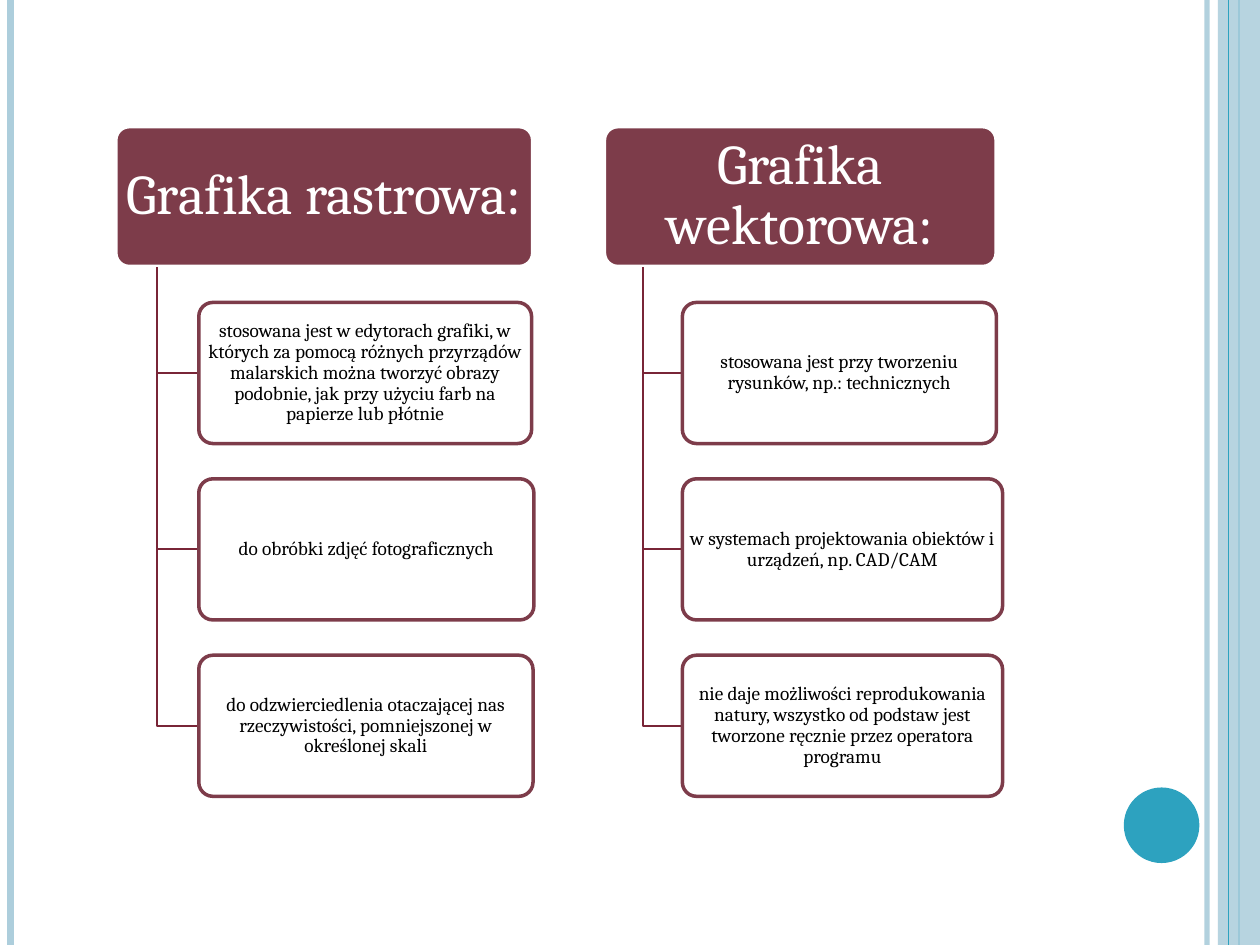
from dataclasses import dataclass

from lxml import etree
from pptx import Presentation
from pptx.dml.color import RGBColor
from pptx.enum.shapes import MSO_CONNECTOR, MSO_SHAPE
from pptx.enum.text import MSO_ANCHOR, PP_ALIGN
from pptx.oxml.ns import qn
from pptx.util import Pt

RECT, OVAL, ROUNDED = MSO_SHAPE.RECTANGLE, MSO_SHAPE.OVAL, MSO_SHAPE.ROUNDED_RECTANGLE
STRAIGHT = MSO_CONNECTOR.STRAIGHT
CENTER, MIDDLE = PP_ALIGN.CENTER, MSO_ANCHOR.MIDDLE

PALE_BLUE = RGBColor(0xAD, 0xCE, 0xDC)
TEAL = RGBColor(0x2D, 0xA2, 0xBF)
MAROON = RGBColor(0x7D, 0x3C, 0x4A)
BRANCH_RED = RGBColor(0x79, 0x25, 0x37)
WHITE = RGBColor(0xFF, 0xFF, 0xFF)
BLACK = RGBColor(0, 0, 0)

SLIDE_W, SLIDE_H = 720, 540
HEAD_TOP, BOX_H = 72, 80.64
GAP = BOX_H / 4
HEAD_BOTTOM = HEAD_TOP + BOX_H


@dataclass
class Stripe:
    x: float
    width: float
    color: RGBColor
    alpha: int = 100


@dataclass
class BoxStyle:
    fill: RGBColor
    line: RGBColor
    line_width: float
    text_color: RGBColor
    size: float
    inset_x: float
    inset_y: float


@dataclass
class Item:
    text: str
    width: float


@dataclass
class Branch:
    heading: str
    left: float
    width: float
    items: list[Item]


HEADING = BoxStyle(MAROON, WHITE, 2.75, WHITE, 32, 3, 2)
DETAIL = BoxStyle(WHITE, MAROON, 2, BLACK, 11, 1, 1)

STRIPES_BEHIND = [
    Stripe(689.8, 3, PALE_BLUE, 93),
    Stripe(6, 4.5, PALE_BLUE),
    Stripe(708, 1.5, TEAL),
]
STRIPE_FRONT = Stripe(702, 0.75, TEAL)

BRANCHES = [
    Branch("Grafika rastrowa:", 65.8, 239, [
        Item("stosowana jest w edytorach grafiki, w których za pomocą różnych "
             "przyrządów malarskich można tworzyć obrazy podobnie, jak przy "
             "użyciu farb na papierze lub płótnie", 190.2),
        Item("do obróbki zdjęć fotograficznych", 191.5),
        Item("do odzwierciedlenia otaczającej nas rzeczywistości, "
             "pomniejszonej w określonej skali", 191),
    ]),
    Branch("Grafika wektorowa:", 345, 224.6, [
        Item("stosowana jest przy tworzeniu rysunków, np.: technicznych", 179.5),
        Item("w systemach projektowania obiektów i urządzeń, np. CAD/CAM", 183),
        Item("nie daje możliwości reprodukowania natury, wszystko od podstaw "
             "jest tworzone ręcznie przez operatora programu", 183),
    ]),
]


def set_alpha(shape, percent: int) -> None:
    color = next(shape._element.spPr.iter(qn("a:srgbClr")))
    etree.SubElement(color, qn("a:alpha"), val=str(percent * 1000))


def add_stripe(s, stripe: Stripe) -> None:
    x = Pt(stripe.x)
    line = s.shapes.add_connector(STRAIGHT, x, 0, x, Pt(SLIDE_H))
    line.line.color.rgb = stripe.color
    line.line.width = Pt(stripe.width)
    if stripe.alpha < 100:
        set_alpha(line, stripe.alpha)
    etree.SubElement(line._element.spPr, qn("a:effectLst"))


def add_solid(s, kind, left: float, top: float, width: float, height: float,
              fill: RGBColor):
    sp = s.shapes.add_shape(kind, Pt(left), Pt(top), Pt(width), Pt(height))
    sp.shadow.inherit = False
    sp.fill.solid()
    sp.fill.fore_color.rgb = fill
    sp.line.fill.background()
    return sp


def add_box(s, text: str, left: float, top: float, width: float,
            style: BoxStyle) -> None:
    sp = add_solid(s, ROUNDED, left, top, width, BOX_H, style.fill)
    sp.adjustments[0] = 0.1
    sp.line.color.rgb = style.line
    sp.line.width = Pt(style.line_width)
    tf = sp.text_frame
    frame_format = {
        "word_wrap": True, "vertical_anchor": MIDDLE,
        "margin_left": Pt(style.inset_x), "margin_right": Pt(style.inset_x),
        "margin_top": Pt(style.inset_y), "margin_bottom": Pt(style.inset_y),
    }
    for name, value in frame_format.items():
        setattr(tf, name, value)
    p = tf.paragraphs[0]
    p.alignment, p.line_spacing = CENTER, 0.9
    r = p.add_run()
    r.text = text
    for name, value in {"name": "Cambria", "size": Pt(style.size)}.items():
        setattr(r.font, name, value)
    r.font.color.rgb = style.text_color


def add_elbow(s, trunk_x: float, end_x: float, end_y: float) -> None:
    """Draw a line down from the heading and right to a detail box."""
    builder = s.shapes.build_freeform(Pt(trunk_x), Pt(HEAD_BOTTOM))
    builder.add_line_segments(
        [(Pt(trunk_x), Pt(end_y)), (Pt(end_x), Pt(end_y))], close=False)
    sp = builder.convert_to_shape()
    sp.shadow.inherit = False
    sp.fill.background()
    sp.line.color.rgb = BRANCH_RED
    sp.line.width = Pt(1)


def add_branch(s, branch: Branch) -> None:
    add_box(s, branch.heading, branch.left, HEAD_TOP, branch.width, HEADING)
    trunk_x = branch.left + branch.width * 0.1
    item_x = branch.left + branch.width * 0.2
    for i, item in enumerate(branch.items, start=1):
        top = HEAD_TOP + i * (BOX_H + GAP)
        add_elbow(s, trunk_x, item_x, top + BOX_H / 2)
        add_box(s, item.text, item_x, top, item.width, DETAIL)


def main() -> None:
    prs = Presentation()
    prs.slide_width, prs.slide_height = Pt(SLIDE_W), Pt(SLIDE_H)
    s = prs.slides.add_slide(prs.slide_layouts[6])
    for stripe in STRIPES_BEHIND:
        add_stripe(s, stripe)
    band = add_solid(s, RECT, 696, 0, 24, SLIDE_H, PALE_BLUE)
    set_alpha(band, 87)
    add_stripe(s, STRIPE_FRONT)
    add_solid(s, OVAL, 642.2, 450, 43.2, 43.2, TEAL)
    for branch in BRANCHES:
        add_branch(s, branch)
    prs.save("out.pptx")


if __name__ == "__main__":
    main()
